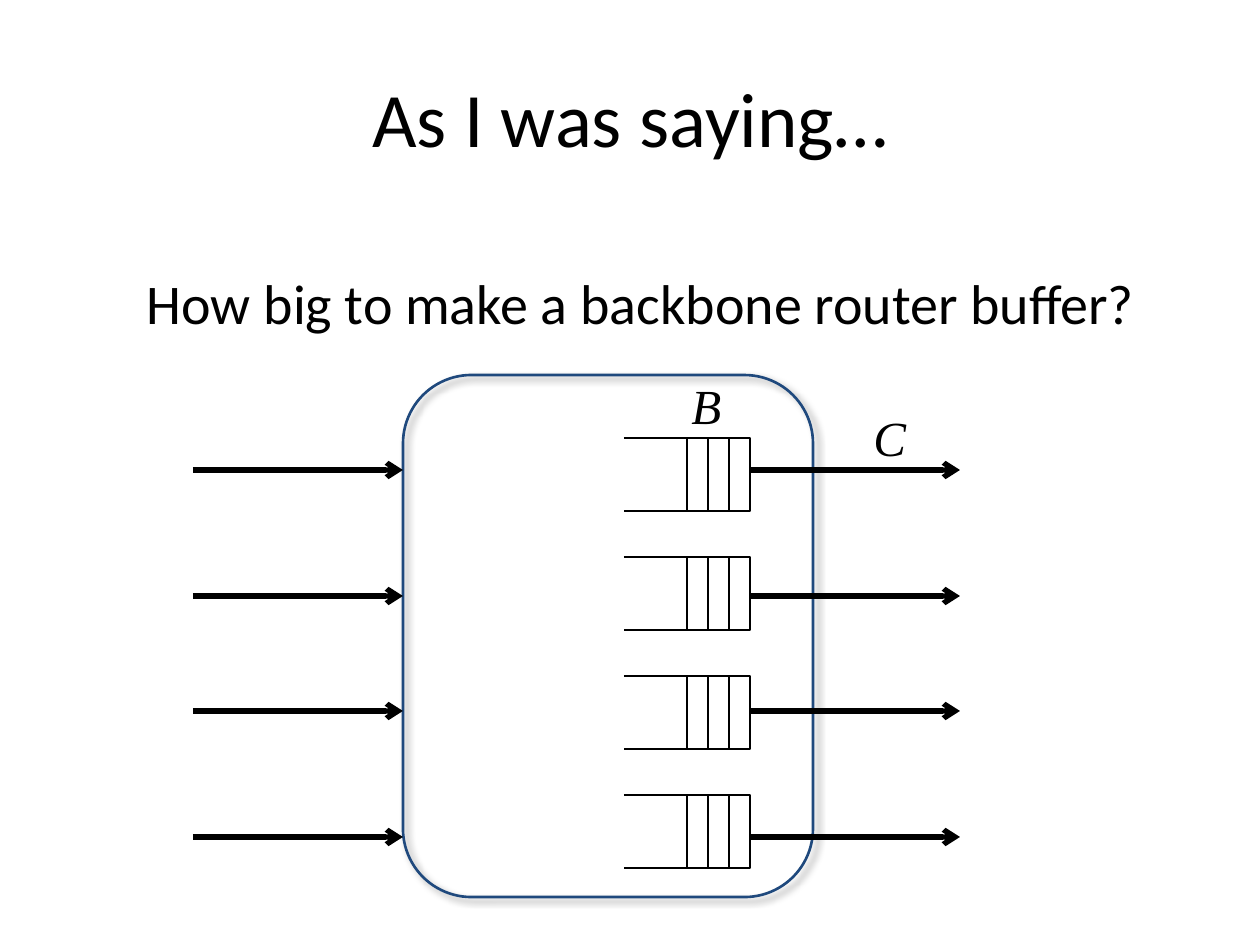
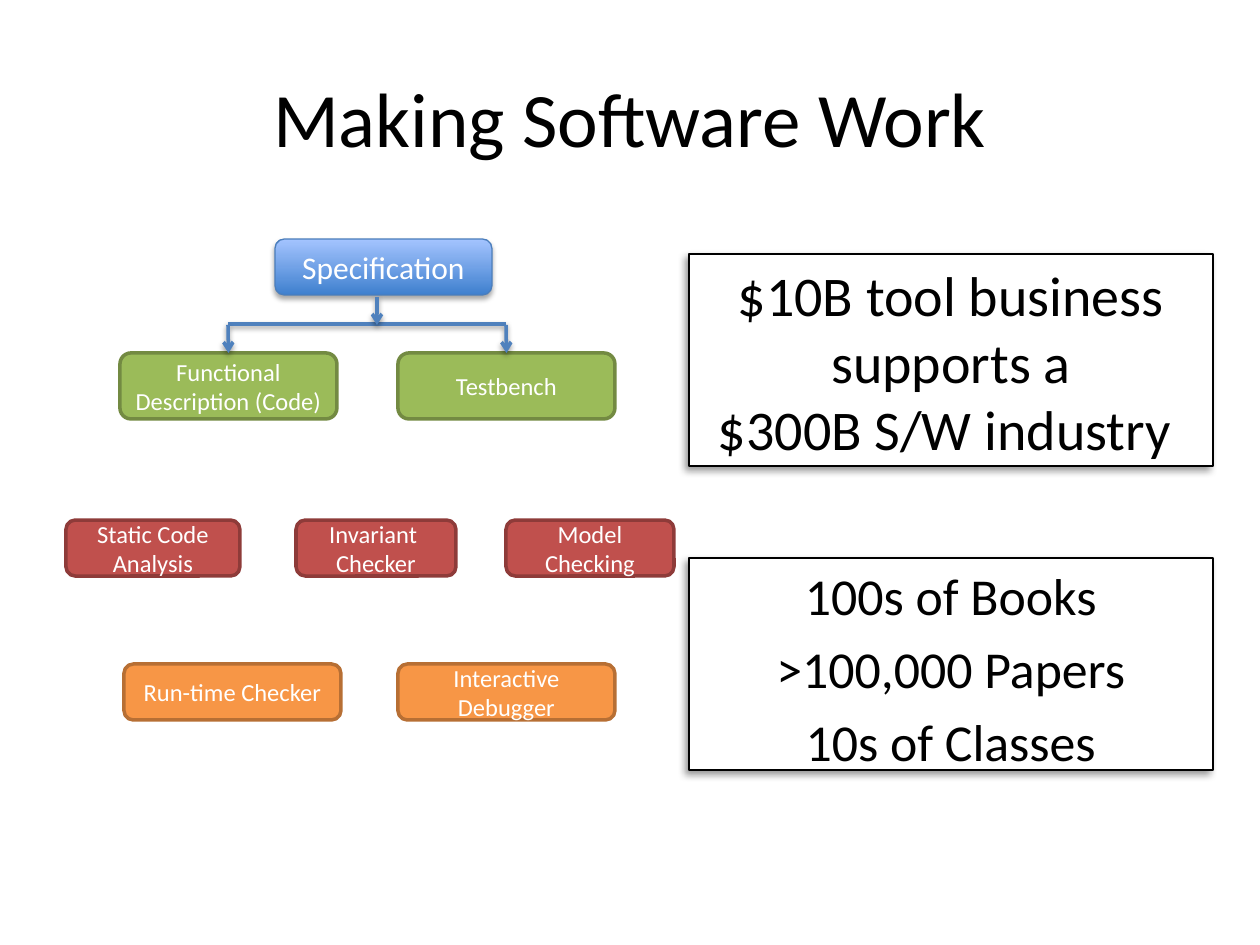
import lxml.etree
import pptx
import pptx.dml.color
import pptx.enum.shapes
import pptx.enum.text
import pptx.oxml.ns
import pptx.util

PX_PER_INCH = 126
COLORS = {
    "black": "000000", "white": "FFFFFF", "navy": "1F497D",
    "blue": "4F81BD", "blue edge": "4B7EBC", "blue dark": "3F80CE", "blue light": "A4C4FF",
    "green": "9BBB59", "green edge": "738A42",
    "red": "C0504D", "red edge": "8E3B39",
    "orange": "F79646", "orange edge": "B76F34",
}
# Each shadow: opacity %, blur pt, distance pt, direction in degrees
ROUTER_SHADOW = (40, 4, 3, 45)
PANEL_SHADOW = (40, 4, 3, 135)
SPECIFICATION_SHADOW = (35, 3.1, 1.8, 90)
FLOW_SHADOW = (38, 3.1, 1.6, 90)

ROUNDED = pptx.enum.shapes.MSO_SHAPE.ROUNDED_RECTANGLE
RECTANGLE = pptx.enum.shapes.MSO_SHAPE.RECTANGLE
LEFT = pptx.enum.text.PP_ALIGN.LEFT
CENTER = pptx.enum.text.PP_ALIGN.CENTER
TOP = pptx.enum.text.MSO_ANCHOR.TOP
MIDDLE = pptx.enum.text.MSO_ANCHOR.MIDDLE


def px(length):
    return pptx.util.Emu(round(length * 914400 / PX_PER_INCH))


def rgb(name):
    return pptx.dml.color.RGBColor.from_string(COLORS[name])


def add_element(parent, tag, **attributes):
    values = {key: str(value) for key, value in attributes.items()}
    return lxml.etree.SubElement(parent, pptx.oxml.ns.qn(tag), values)


class Deck:
    def __init__(self):
        self.presentation = pptx.Presentation()
        self.presentation.slide_width = px(1260)
        self.presentation.slide_height = px(945)
        self.slide = None

    def start_slide(self, title):
        self.slide = self.presentation.slides.add_slide(self.presentation.slide_layouts[5])
        placeholder = self.slide.shapes.title
        placeholder.left, placeholder.top = px(63), px(38)
        placeholder.width, placeholder.height = px(1134), px(158)
        self.fill_text(placeholder, [title], 44)

    def fill_text(self, shape, lines, size, color="black", font="Calibri", italic=False,
                  align=CENTER, anchor=MIDDLE, space_before=0):
        """Set one paragraph per line; a newline inside one is a line break."""
        frame = shape.text_frame
        frame.word_wrap = True
        frame.vertical_anchor = anchor
        for index, line in enumerate(lines):
            paragraph = frame.add_paragraph() if index else frame.paragraphs[0]
            paragraph.alignment = align
            if index:
                paragraph.space_before = pptx.util.Pt(space_before)
            for part_index, part in enumerate(line.split("\n")):
                if part_index:
                    paragraph.add_line_break()
                run = paragraph.add_run()
                run.text = part
                run.font.size = pptx.util.Pt(size)
                run.font.name = font
                run.font.italic = italic
                run.font.color.rgb = rgb(color)

    def text(self, left, top, width, height, lines, size, **style):
        shape = self.slide.shapes.add_textbox(px(left), px(top), px(width), px(height))
        self.fill_text(shape, lines, size, anchor=TOP, **style)

    def outline(self, shape, color, width):
        shape.line.color.rgb = rgb(color)
        shape.line.width = pptx.util.Pt(width)

    def effects(self, properties, shadow):
        """Replace the theme's effects by the given shadow, or by none."""
        effect_list = add_element(properties, "a:effectLst")
        if shadow:
            opacity, blur, distance, direction = shadow
            outer = add_element(effect_list, "a:outerShdw", blurRad=pptx.util.Pt(blur),
                                dist=pptx.util.Pt(distance), dir=direction * 60000,
                                rotWithShape=0)
            color = add_element(outer, "a:srgbClr", val=COLORS["black"])
            add_element(color, "a:alpha", val=opacity * 1000)

    def box(self, kind, left, top, width, height, fill, edge, edge_width, shadow=None):
        """Fill is a colour name, a (bottom, top) pair for a gradient, or None."""
        shape = self.slide.shapes.add_shape(kind, px(left), px(top), px(width), px(height))
        if fill is None:
            shape.fill.background()
        elif isinstance(fill, tuple):
            shape.fill.gradient()
            shape.fill.gradient_angle = 90
            for stop, name in zip(shape.fill.gradient_stops, fill):
                stop.color.rgb = rgb(name)
        else:
            shape.fill.solid()
            shape.fill.fore_color.rgb = rgb(fill)
        self.outline(shape, edge, edge_width)
        self.effects(shape.element.spPr, shadow)
        return shape

    def step(self, left, top, width, height, color, label):
        shape = self.box(ROUNDED, left, top, width, height, color, color + " edge", 2)
        self.fill_text(shape, label.split("\n"), 14, "white")
        return shape

    def panel(self, top, lines, size):
        shape = self.box(RECTANGLE, 689, top, 524, 212, "white", "black", 0.75, PANEL_SHADOW)
        self.fill_text(shape, lines, size, anchor=TOP, space_before=6)

    def line(self, start, end, color, width, arrow=False, shadow=None, target=None):
        """Draw a straight line; a target shape is joined at its top."""
        connector = self.slide.shapes.add_connector(
            pptx.enum.shapes.MSO_CONNECTOR.STRAIGHT, *map(px, start + end))
        if target is not None:
            connector.end_connect(target, 0)
        self.outline(connector, color, width)
        properties = connector.element.spPr
        if arrow:
            add_element(properties.find(pptx.oxml.ns.qn("a:ln")), "a:tailEnd", type="arrow")
        self.effects(properties, shadow)

    def queue(self, left, top, width, height):
        """Draw a buffer open on the left, with three packets waiting on the right."""
        right, bottom = left + width, top + height
        builder = self.slide.shapes.build_freeform(px(left), px(top))
        corners = [(right, top), (right, bottom), (left, bottom)]
        builder.add_line_segments([(px(x), px(y)) for x, y in corners], close=False)
        shape = builder.convert_to_shape()
        shape.fill.solid()
        shape.fill.fore_color.rgb = rgb("white")
        self.outline(shape, "black", 1.5)
        self.effects(shape.element.spPr, None)
        for packet in range(1, 4):
            x = right - packet * 21
            self.line((x, top), (x, bottom), "black", 1.5)


def build_router_slide(deck):
    deck.start_slide("As I was saying…")
    deck.text(74, 262, 1134, 624, ["How big to make a backbone router buffer?"], 32)
    deck.box(ROUNDED, 403, 375, 410, 522, None, "navy", 1.5, ROUTER_SHADOW)
    for row in range(4):
        deck.queue(624, 438 + row * 119, 126, 73)
    for link_start in (193, 750):
        for y in (470, 596, 711, 837):
            deck.line((link_start, y), (link_start + 210, y), "black", 3, arrow=True)
    for letter, left, top in (("C", 861, 401), ("B", 679, 369)):
        deck.text(left, top, 74, 72, [letter], 28, font="Times New Roman",
                  italic=True, align=LEFT)


def build_software_slide(deck):
    deck.start_slide("Making Software Work")
    for left, width, label in ((66, 174, "Static Code Analysis"),
                               (296, 160, "Invariant \nChecker"),
                               (506, 168, "Model Checking")):
        deck.step(left, 520, width, 56, "red", label)
    for left, label in ((124, "Run-time Checker"), (398, "Interactive Debugger")):
        deck.step(left, 664, 217, 56, "orange", label)

    specification = deck.box(ROUNDED, 275, 239, 217, 56, ("blue dark", "blue light"),
                             "blue edge", 0.75, SPECIFICATION_SHADOW)
    deck.fill_text(specification, ["Specification"], 18, "white")
    testbench = deck.step(398, 353, 217, 66, "green", "Testbench")
    code = deck.step(120, 353, 217, 66, "green", "Functional Description (Code)")

    deck.line((228, 324), (506, 324), "blue", 2, shadow=FLOW_SHADOW)
    for x, target in ((506, testbench), (228, code)):
        deck.line((x, 325), (x, 353), "blue", 2, True, FLOW_SHADOW, target)
    deck.line((377, 297), (377, 325), "blue", 2, True, FLOW_SHADOW)

    deck.panel(254, ["$10B tool business\nsupports a\n$300B S/W industry "], 32)
    deck.panel(558, ["100s of Books", ">100,000 Papers", "10s of Classes"], 29.6)


def main():
    deck = Deck()
    build_router_slide(deck)
    build_software_slide(deck)
    deck.presentation.save("out.pptx")


if __name__ == "__main__":
    main()
